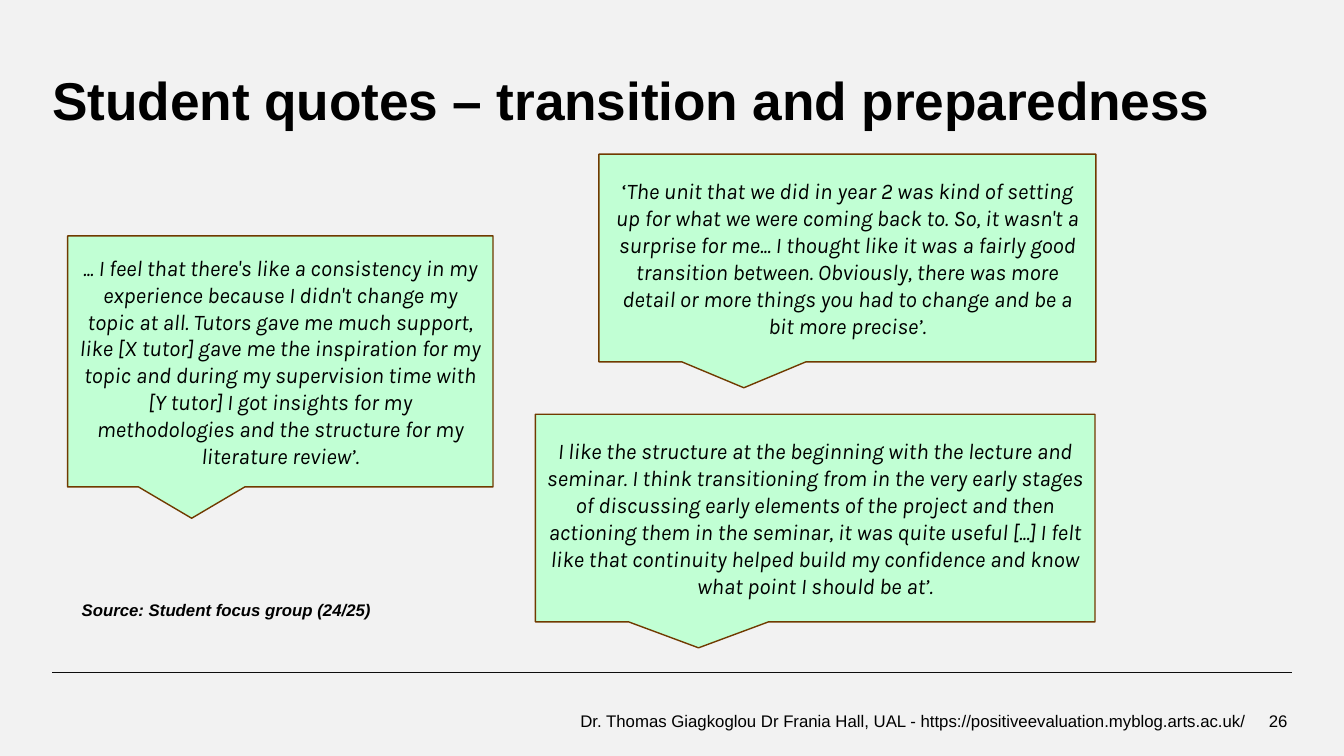
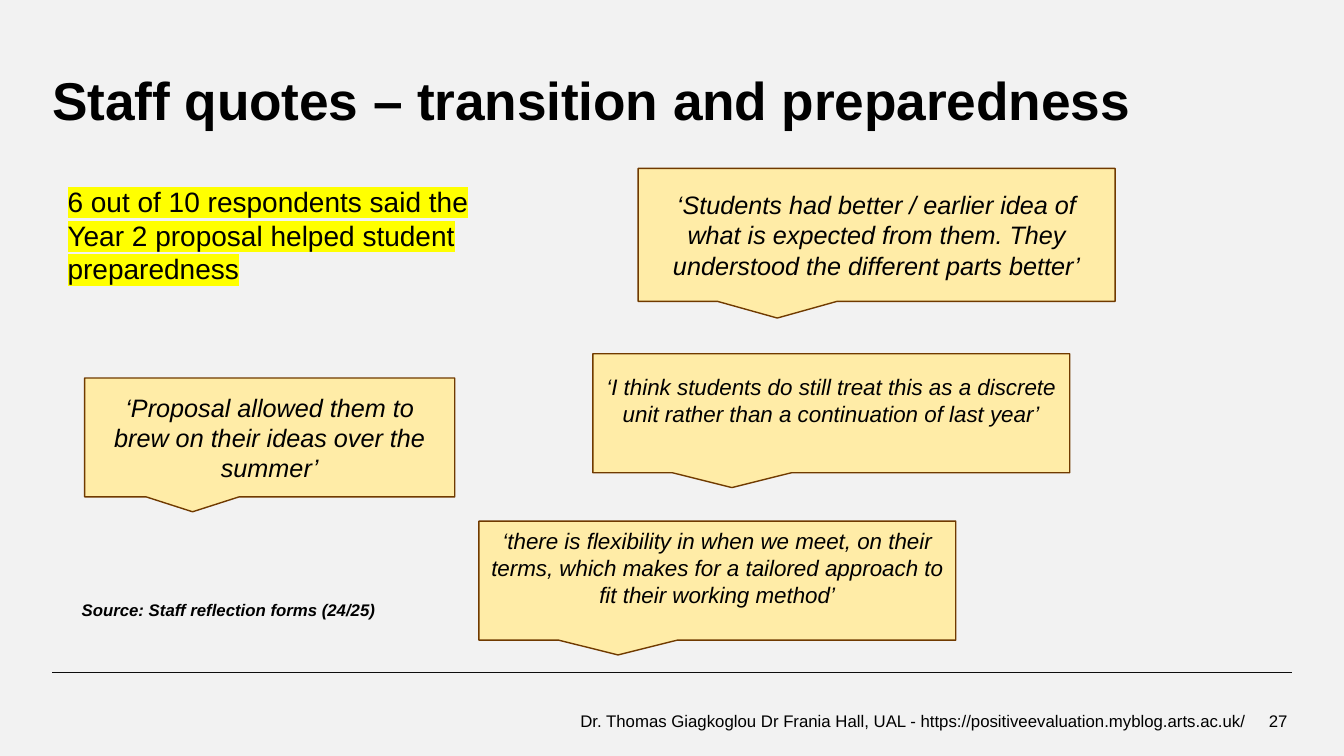
from pptx import Presentation
from pptx.dml.color import RGBColor
from pptx.enum.shapes import MSO_CONNECTOR, MSO_SHAPE
from pptx.enum.text import MSO_ANCHOR, PP_ALIGN
from pptx.oxml.ns import qn
from pptx.util import Inches, Pt
from lxml import etree

BACKGROUND, INK, RULE, OUTLINE = "F2F2F2", "000000", "0D0D0D", "703A00"
STUDENT_FILL, STAFF_FILL, HIGHLIGHT = "C1FFD4", "FFECA7", "FFFF00"
LEFT, RIGHT = 0.52, 12.81
NUMBER_LEFT = 12.36
BLANK_LINE = 0.26
FOOTER = "Dr. Thomas Giagkoglou Dr Frania Hall, UAL - https://positiveevaluation.myblog.arts.ac.uk/"

TITLE_FONT = {"name": "Arial", "size": Pt(38), "bold": True}
FOOTER_FONT = {"name": "Arial", "size": Pt(12)}
SOURCE_FONT = {**FOOTER_FONT, "bold": True, "italic": True}
FINDING_FONT = {"name": "Arial", "size": Pt(20)}
STUDENT_FONT = {"name": "Karla", "size": Pt(16), "italic": True}
STAFF_FONT = {"name": "Arial", "size": Pt(16), "italic": True}
STAFF_LARGE_FONT = {**STAFF_FONT, "size": Pt(18)}
NO_MARGINS = dict.fromkeys(("margin_left", "margin_top", "margin_right", "margin_bottom"), 0)


def colour(hex_value):
    """Return the colour for a hex string."""
    return RGBColor.from_string(hex_value)


def apply(target, values):
    """Set each attribute of the target from a dict."""
    for name, value in values.items():
        setattr(target, name, value)


def add_run(paragraph, text, font):
    """Add a run of black text in the given font."""
    run = paragraph.add_run()
    run.text = text
    run.font.color.rgb = colour(INK)
    apply(run.font, font)
    return run


def add_text(slide, box, lines, font, anchor=MSO_ANCHOR.TOP, align=PP_ALIGN.LEFT):
    """Place lines of text without margins and return their runs."""
    frame = slide.shapes.add_textbox(*map(Inches, box)).text_frame
    apply(frame, {**NO_MARGINS, "word_wrap": True, "vertical_anchor": anchor})
    runs = []
    for index, line in enumerate(lines):
        paragraph = frame.paragraphs[0] if index == 0 else frame.add_paragraph()
        paragraph.alignment = align
        runs.append(add_run(paragraph, line, font))
    return runs


def add_title(slide, title):
    """Place the slide heading."""
    run, = add_text(slide, (LEFT, 0.56, 12.28, 0.75), [title], TITLE_FONT, MSO_ANCHOR.BOTTOM)
    run.font._element.set("spc", "-10")
    slide.shapes[-1].text_frame.paragraphs[0].line_spacing = 0.9


def add_footer(slide, number):
    """Place the rule, the credit line and the page number."""
    rule = slide.shapes.add_connector(
        MSO_CONNECTOR.STRAIGHT, *map(Inches, (LEFT, 6.67, RIGHT, 6.67)))
    rule.line.color.rgb = colour(RULE)
    rule.line.width = Pt(0.25)
    etree.SubElement(rule._element.spPr, qn("a:effectLst"))
    for left, width, text in ((3.64, NUMBER_LEFT - 3.64, FOOTER), (NUMBER_LEFT, 0.41, str(number))):
        add_text(slide, (left, 6.95, width, 0.4), [text], FOOTER_FONT,
                 MSO_ANCHOR.MIDDLE, PP_ALIGN.RIGHT)


def add_quote(slide, box, text, fill, font, opening="", space_below=0):
    """Place a speech callout, with an optional upright opening mark."""
    callout = slide.shapes.add_shape(MSO_SHAPE.RECTANGULAR_CALLOUT, *map(Inches, box))
    callout.shadow.inherit = False
    callout.fill.solid()
    callout.fill.fore_color.rgb = colour(fill)
    callout.line.color.rgb = colour(OUTLINE)
    callout.line.width = Pt(1)
    frame = callout.text_frame
    apply(frame, {"word_wrap": True, "vertical_anchor": MSO_ANCHOR.MIDDLE,
                  "margin_bottom": Inches(0.05 + space_below)})
    paragraph = frame.paragraphs[0]
    paragraph.alignment = PP_ALIGN.CENTER
    if opening:
        add_run(paragraph, opening, {**font, "italic": False})
    add_run(paragraph, text, font)


def add_finding(slide, box, lines):
    """Place highlighted lines of text."""
    for run in add_text(slide, box, lines, FINDING_FONT):
        highlight = etree.Element(qn("a:highlight"))
        etree.SubElement(highlight, qn("a:srgbClr"), val=HIGHLIGHT)
        run.font._element.find(qn("a:solidFill")).addnext(highlight)


def add_quote_slide(prs, number, title, source):
    """Add a slide with the shared heading, source and footer."""
    slide = prs.slides.add_slide(prs.slide_layouts[6])
    add_title(slide, title)
    add_text(slide, (0.81, 5.95, 3.4, 0.22), [source], SOURCE_FONT)
    add_footer(slide, number)
    return slide


def add_student_slide(prs):
    """Build the slide of student quotes."""
    slide = add_quote_slide(prs, 26, "Student quotes – transition and preparedness",
                            "Source: Student focus group (24/25)")
    quotes = (
        ((0.67, 2.34, 4.22, 2.49), "",
         "... I feel that there's like a consistency in my experience because I didn't change my "
         "topic at all. Tutors gave me much support, like [X tutor] gave me the inspiration for my "
         "topic and during my supervision time with [Y tutor] I got insights for my methodologies "
         "and the structure for my literature review’."),
        ((5.94, 1.53, 4.93, 2.06), "‘",
         "The unit that we did in year 2 was kind of setting up for what we were coming back to. "
         "So, it wasn't a surprise for me... I thought like it was a fairly good transition "
         "between. Obviously, there was more detail or more things you had to change and be a bit "
         "more precise’."),
        ((5.31, 4.11, 5.55, 2.06), "",
         "I like the structure at the beginning with the lecture and seminar. I think "
         "transitioning from in the very early stages of discussing early elements of the project "
         "and then actioning them in the seminar, it was quite useful [...] I felt like that "
         "continuity helped build my confidence and know what point I should be at’."),
    )
    for box, opening, text in quotes:
        add_quote(slide, box, text, STUDENT_FILL, STUDENT_FONT, opening)


def add_staff_slide(prs):
    """Build the slide of staff quotes."""
    slide = add_quote_slide(prs, 27, "Staff quotes – transition and preparedness",
                            "Source: Staff reflection forms (24/25)")
    add_finding(slide, (0.67, 1.83, 4.46, 1),
                ("6 out of 10 respondents said the", "Year 2 proposal helped student",
                 "preparedness"))
    quotes = (
        ((0.84, 3.75, 3.67, 1.18), STAFF_LARGE_FONT, 0,
         "‘Proposal allowed them to brew on their ideas over the summer’"),
        ((6.33, 1.67, 4.73, 1.32), STAFF_LARGE_FONT, 0,
         "‘Students had better / earlier idea of what is expected from them. They understood the "
         "different parts better’"),
        ((5.88, 3.51, 4.73, 1.18), STAFF_FONT, BLANK_LINE,
         "‘I think students do still treat this as a discrete unit rather than a continuation of "
         "last year’"),
        ((4.75, 5.17, 4.73, 1.18), STAFF_FONT, BLANK_LINE,
         "‘there is flexibility in when we meet, on their terms, which makes for a tailored "
         "approach to fit their working method’"),
    )
    for box, font, space_below, text in quotes:
        add_quote(slide, box, text, STAFF_FILL, font, space_below=space_below)


def main():
    """Build and save the presentation."""
    prs = Presentation()
    prs.slide_width, prs.slide_height = Inches(13.33), Inches(7.5)
    background = prs.slide_master.background.fill
    background.solid()
    background.fore_color.rgb = colour(BACKGROUND)
    add_student_slide(prs)
    add_staff_slide(prs)
    prs.save("out.pptx")


if __name__ == "__main__":
    main()
